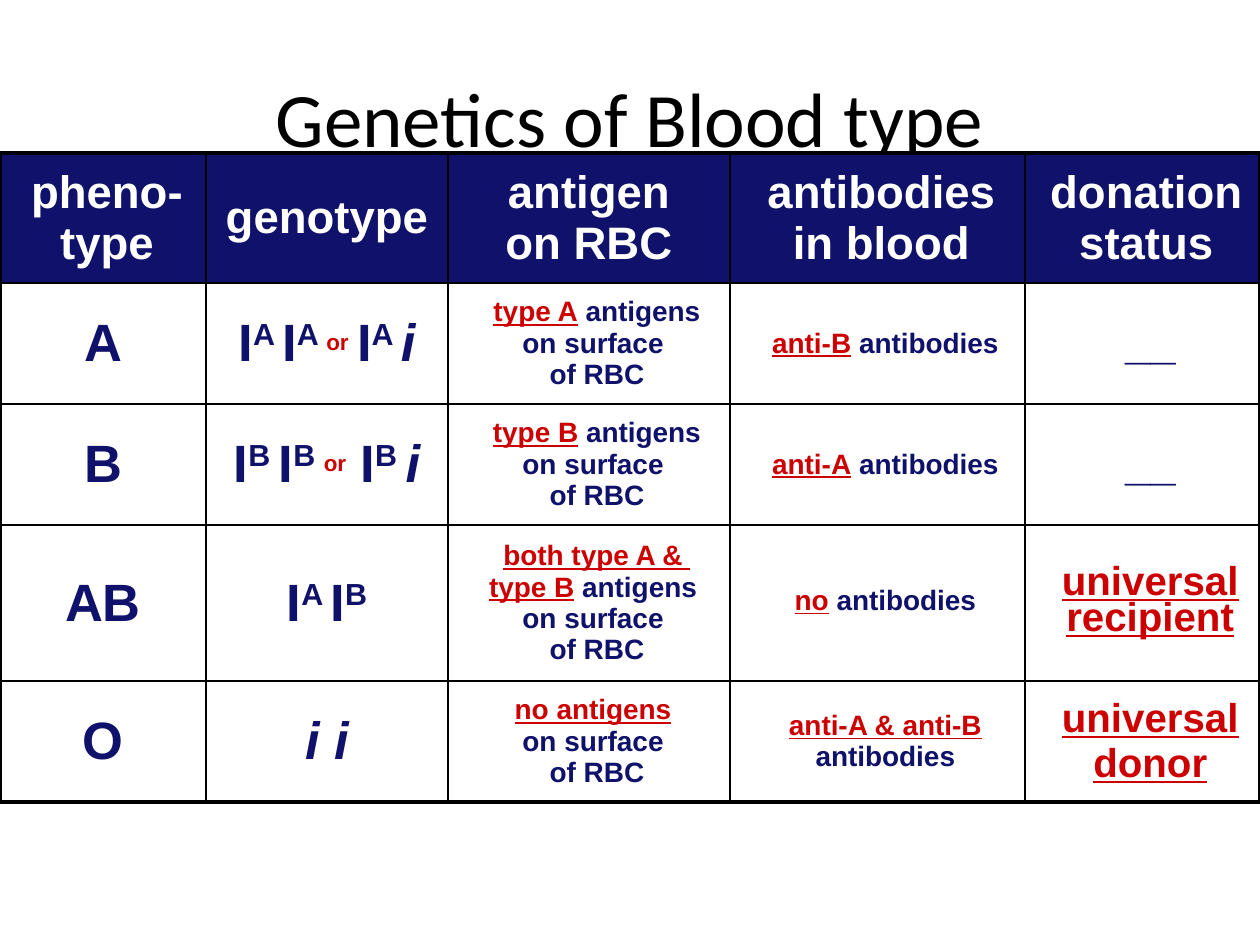
from lxml.etree import SubElement
from pptx import Presentation
from pptx.dml.color import RGBColor
from pptx.enum.text import MSO_ANCHOR as Anchor, PP_ALIGN as Align
from pptx.oxml.ns import qn
from pptx.util import Emu, Pt

NAVY, RED, WHITE, BLACK = "0F116A", "CC0000", "FFFFFF", "000000"
THIN, THICK = 1, 2.25


def px(n):
    return Emu(round(n * 914400 / 126))


def color(hex_value):
    return RGBColor.from_string(hex_value)


class SlideBuilder:
    font = "Arial"
    # Run marks: colour, underline, italic, superscript, size
    marks = {
        "": (NAVY, False, False, False, None),
        "white": (WHITE, False, False, False, None),
        "key": (RED, True, False, False, None),
        "red": (RED, False, False, False, None),
        "italic": (NAVY, False, True, False, None),
        "super": (NAVY, False, False, True, None),
        "or": (RED, False, False, True, 22),
    }

    def __init__(self, slide):
        self.slide = slide

    def title(self, text, left, top, width, height):
        frame = self.slide.shapes.add_textbox(
            px(left), px(top), px(width), px(height)).text_frame
        frame.word_wrap = True
        frame.vertical_anchor = Anchor.MIDDLE
        paragraph = frame.paragraphs[0]
        paragraph.text = text
        paragraph.alignment = Align.CENTER
        paragraph.font.name = "Calibri"
        paragraph.font.size = Pt(44)
        paragraph.font.color.rgb = color(BLACK)

    def run(self, paragraph, text, mark):
        hex_value, underline, italic, raised, size = self.marks[mark]
        for i, line in enumerate(text.split("\n")):
            if i:
                paragraph.add_line_break()
            if not line:
                continue
            run = paragraph.add_run()
            run.text = line
            run.font.color.rgb = color(hex_value)
            if underline:
                run.font.underline = True
            if italic:
                run.font.italic = True
            if size:
                run.font.size = Pt(size)
            if raised:
                run._r.get_or_add_rPr().set("baseline", "30000")

    def borders(self, cell, widths):
        properties = cell._tc.get_or_add_tcPr()
        for i, (side, width) in enumerate(zip("LRTB", widths)):
            line = SubElement(properties, qn(f"a:ln{side}"), w=str(Pt(width)))
            fill = SubElement(line, qn("a:solidFill"))
            SubElement(fill, qn("a:srgbClr"), val=BLACK)
            properties.insert(i, line)

    def cell(self, cell, runs, size, fill, indent, spacing):
        cell.fill.solid()
        cell.fill.fore_color.rgb = color(fill)
        cell.vertical_anchor = Anchor.MIDDLE
        paragraph = cell.text_frame.paragraphs[0]
        paragraph.alignment = Align.CENTER
        paragraph.space_before = Pt(round(size * 0.2, 1))
        if spacing:
            paragraph.line_spacing = spacing
        paragraph.font.name = self.font
        paragraph.font.bold = True
        paragraph.font.size = Pt(size)
        if indent:
            paragraph._p.get_or_add_pPr().set("marL", str(px(indent)))
        for text, mark in runs:
            self.run(paragraph, text, mark)

    def table(self, left, top, columns, heights, rows):
        table = self.slide.shapes.add_table(
            len(heights), len(columns), px(left), px(top),
            px(sum(columns)), px(sum(heights))).table
        table.first_row = table.horz_banding = False
        for column, width in zip(table.columns, columns):
            column.width = px(width)
        for row, height in zip(table.rows, heights):
            row.height = px(height)
        last_row, last_column = len(heights) - 1, len(columns) - 1
        for r, row in enumerate(rows):
            for c, (runs, size, fill, indent, spacing) in enumerate(row):
                cell = table.cell(r, c)
                self.cell(cell, runs, size, fill, indent, spacing)
                outer = (c == 0, c == last_column, r == 0, r == last_row)
                self.borders(cell, [THICK if edge else THIN for edge in outer])


def header(text, indent=0):
    return [(text, "white")], 26, NAVY, indent, None


def body(runs, size, indent=0, spacing=None):
    return runs, size, WHITE, indent, spacing


def blood_type(name, genotype, antigen, antibody, status, tight=None):
    status_runs, status_size = status
    return [
        body([(name, "")], 30),
        body(genotype, 30),
        body(antigen, 16, 16),
        body([(antibody, "key"), (" ", "red"), ("antibodies", "")], 16, 16, tight),
        body(status_runs, status_size, 16, tight),
    ]


def single_allele(name, other, gap_before_allele):
    """Row for type A or B, which differ only in their letters."""
    allele = [("I", ""), (f"{name} ", "super")]
    genotype = [*allele, *allele, ("or", "or"), (" ", gap_before_allele),
                *allele, ("i", "italic")]
    antigen = [(f"type {name}", "key"), (" antigens\non surface \nof RBC", "")]
    return blood_type(name, genotype, antigen, f"anti-{other}", ([("__", "")], 26))


def universal(role):
    return [(f"universal {role}", "key")], 23


def main():
    deck = Presentation()
    deck.slide_width, deck.slide_height = px(1260), px(945)
    builder = SlideBuilder(deck.slides.add_slide(deck.slide_layouts[6]))

    # Title
    builder.title("Genetics of Blood type", 63, 38, 1134, 157)

    # Blood type table
    rows = [
        [header("pheno-type", 8), header("genotype"), header("antigen\non RBC"),
         header("antibodies\nin blood", 8), header("donation\nstatus", 8)],
        single_allele("A", "B", "super"),
        single_allele("B", "A", ""),
        blood_type("AB",
                   [("I", ""), ("A ", "super"), ("I", ""), ("B", "super")],
                   [("both type A & \ntype B", "key"),
                    (" antigens \non surface \nof RBC", "")],
                   "no", universal("recipient"), tight=0.8),
        blood_type("O", [("i i", "italic")],
                   [("no antigens", "key"), (" \non surface \nof RBC", "")],
                   "anti-A & anti-B", universal("donor")),
    ]
    builder.table(0, 153, [206, 242, 282, 295, 235], [130, 121, 121, 156, 121], rows)

    deck.save("out.pptx")


if __name__ == "__main__":
    main()
